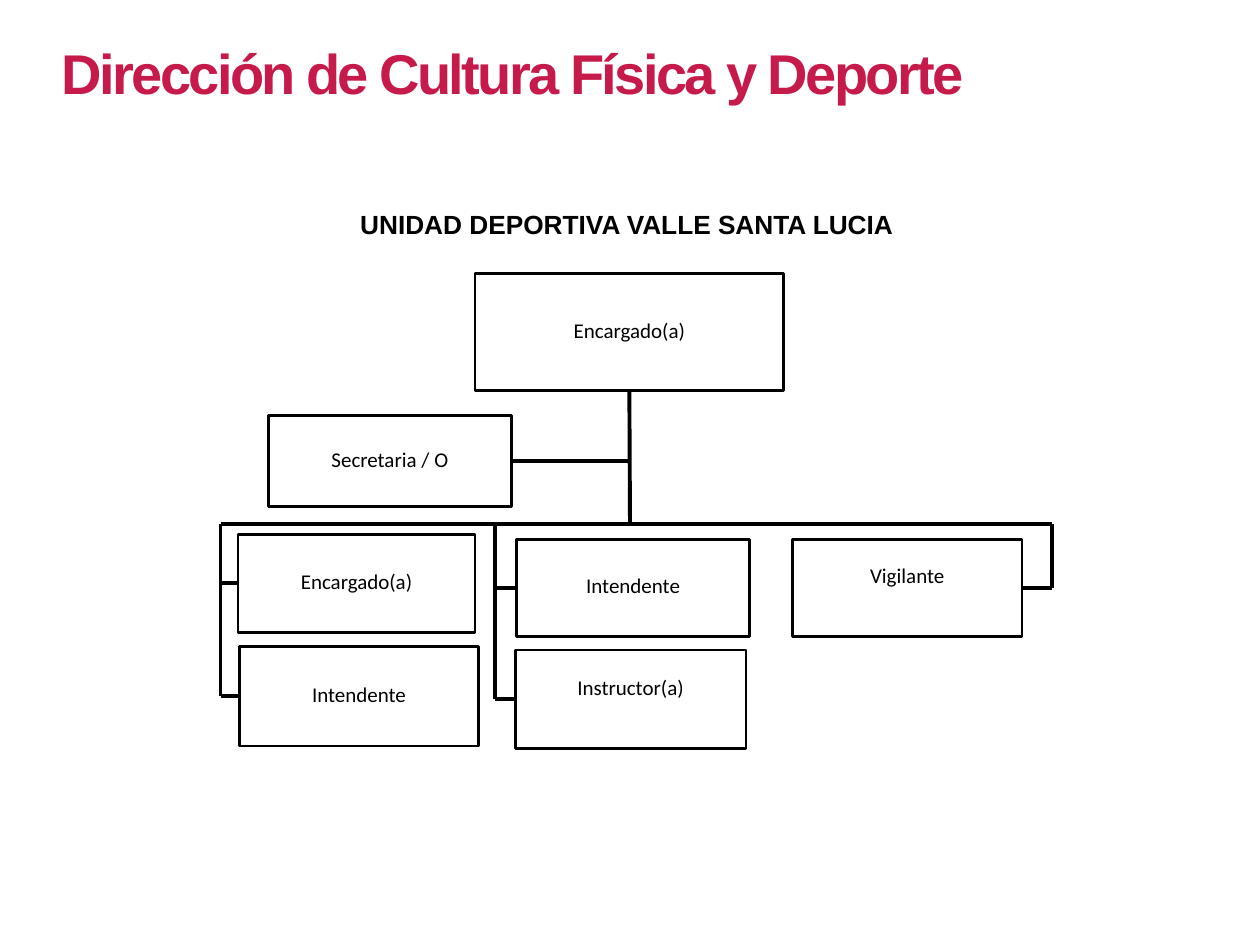
import pptx
import pptx.dml.color
import pptx.enum.shapes
import pptx.enum.text
import pptx.util
from lxml import etree

COLORS = {"title": "C51A4A", "ink": "000000", "box": "FFFFFF"}
COLS, ROWS = 100, 75
LEFT, BOTTOM, RIGHT = 1, 2, 3


def rgb(name):
    return pptx.dml.color.RGBColor.from_string(COLORS[name])


class OrgChart:
    """Style and current slide; lengths are columns and rows of the grid."""

    def __init__(self, prs):
        self.slide = prs.slides.add_slide(prs.slide_layouts[6])
        self.col = prs.slide_width / COLS
        self.row = prs.slide_height / ROWS

    def x(self, cols):
        return round(cols * self.col)

    def y(self, rows):
        return round(rows * self.row)

    def area(self, left, top, width, height):
        return self.x(left), self.y(top), self.x(width), self.y(height)

    def set_text(self, tf, text, font, size, color="ink", bold=False):
        tf.text = text
        r = tf.paragraphs[0].runs[0]
        r.font.name, r.font.size, r.font.bold = font, pptx.util.Pt(size), bold
        r.font.color.rgb = rgb(color)
        return r

    def heading(self, text, area, size, color="ink", wrap=False, spacing=0):
        tf = self.slide.shapes.add_textbox(*self.area(*area)).text_frame
        tf.word_wrap = wrap
        tf.auto_size = pptx.enum.text.MSO_AUTO_SIZE.SHAPE_TO_FIT_TEXT
        r = self.set_text(tf, text, "Arial", size, color, bold=True)
        if spacing:
            r.font._element.set("spc", str(round(spacing * 100)))

    def box(self, text, area, lift=0):
        """Outlined post; lift adds rows of margin below its text."""
        sp = self.slide.shapes.add_shape(
            pptx.enum.shapes.MSO_SHAPE.RECTANGLE, *self.area(*area))
        sp.shadow.inherit = False
        sp.fill.solid()
        sp.fill.fore_color.rgb = rgb("box")
        sp.line.color.rgb = rgb("ink")
        sp.line.width = pptx.util.Pt(1.5)
        tf = sp.text_frame
        tf.word_wrap = False
        tf.vertical_anchor = pptx.enum.text.MSO_ANCHOR.MIDDLE
        tf.margin_bottom += self.y(lift)
        self.set_text(tf, text, "Calibri", 12)
        p = tf.paragraphs[0]
        p.alignment = pptx.enum.text.PP_ALIGN.CENTER
        p.line_spacing = 0.8
        return sp

    def line(self, x1, y1, x2, y2):
        """Straight line between two points given in EMU."""
        cn = self.slide.shapes.add_connector(
            pptx.enum.shapes.MSO_CONNECTOR.STRAIGHT, x1, y1, x2, y2)
        cn.line.color.rgb = rgb("ink")
        cn.line.width = pptx.util.Pt(2.25)
        etree.SubElement(cn._element.spPr, pptx.oxml.ns.qn("a:effectLst"))
        return cn

    def stub(self, col, sp, side):
        """Horizontal line from a column to the middle of a box's side."""
        y = sp.top + sp.height // 2
        edge = sp.left if side == LEFT else sp.left + sp.width
        self.line(self.x(col), y, edge, y).end_connect(sp, side)
        return y

    def branch(self, col, top, boxes, side):
        """Vertical line from a row to the last box, with a stub to each."""
        ends = [self.stub(col, sp, side) for sp in boxes]
        self.line(self.x(col), self.y(top), self.x(col), max(ends))


def main():
    prs = pptx.Presentation()
    prs.slide_width, prs.slide_height = pptx.util.Inches(10), pptx.util.Inches(7.5)
    chart = OrgChart(prs)

    chart.heading("Dirección de Cultura Física y Deporte", (3.9, 2.6, 76.9, 6.4),
                  32, "title", wrap=True, spacing=-1.5)
    chart.heading("UNIDAD DEPORTIVA VALLE SANTA LUCIA", (27.6, 16, 44.8, 3.5), 15)

    head = chart.box("Encargado(a)", (37.7, 21.7, 24.5, 9.3))
    secretary = chart.box("Secretaria / O", (21.3, 33, 19.3, 7.2))
    managers = [chart.box("Encargado(a)", (18.9, 42.4, 18.8, 7.8)),
                chart.box("Intendente", (19, 51.3, 19, 7.9))]
    staff = [chart.box("Intendente", (41, 42.8, 18.5, 7.7)),
             chart.box("Instructor(a)", (40.9, 51.6, 18.3, 7.8), lift=1.6)]
    guard = [chart.box("Vigilante", (62.9, 42.8, 18.2, 7.7), lift=1.6)]

    spine, bus = 50, 41.6
    left, middle, right = 17.5, 39.3, 83.5
    chart.line(head.left + head.width // 2, head.top + head.height,
               chart.x(spine), chart.y(bus)).begin_connect(head, BOTTOM)
    chart.stub(spine, secretary, RIGHT)
    chart.line(chart.x(left), chart.y(bus), chart.x(right), chart.y(bus))
    chart.branch(left, bus, managers, LEFT)
    chart.branch(middle, bus, staff, LEFT)
    chart.branch(right, bus, guard, RIGHT)

    prs.save("out.pptx")


if __name__ == "__main__":
    main()
